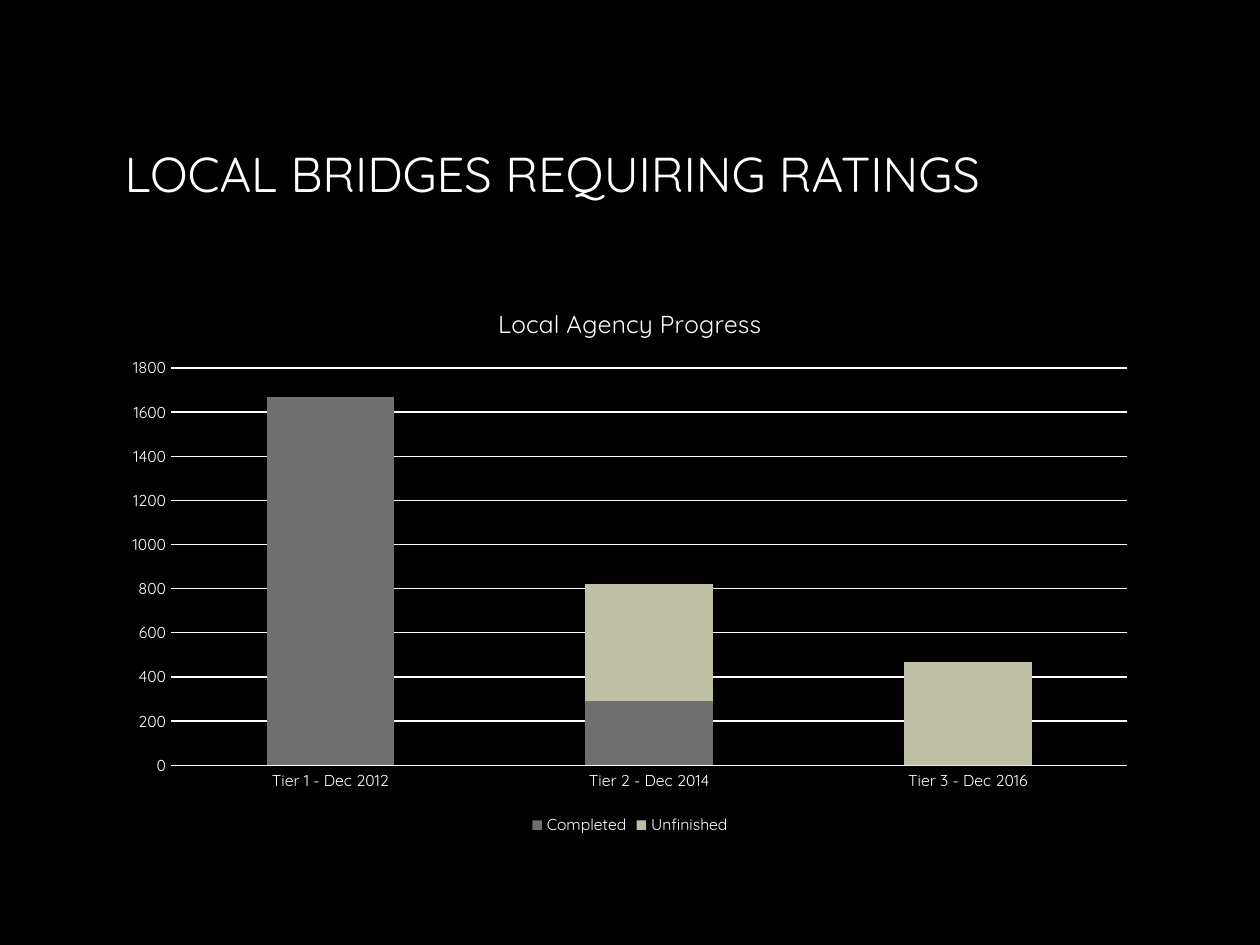
"""Build the slide on local bridges requiring ratings."""
from typing import NamedTuple

from pptx import Presentation
from pptx.chart.data import CategoryChartData as ChartData
from pptx.dml.color import RGBColor
from pptx.enum.chart import XL_CHART_TYPE as ChartType
from pptx.enum.chart import XL_LEGEND_POSITION as LegendPosition
from pptx.enum.chart import XL_TICK_MARK as TickMark
from pptx.enum.text import MSO_ANCHOR as Anchor
from pptx.enum.text import MSO_AUTO_SIZE as AutoSize
from pptx.enum.text import PP_ALIGN as Align
from pptx.util import Emu, Pt

BLACK = RGBColor(0x00, 0x00, 0x00)
WHITE = RGBColor(0xFF, 0xFF, 0xFF)
GRAY = RGBColor(0x6F, 0x6F, 0x6F)
SAND = RGBColor(0xBF, 0xBF, 0xA5)
FONT = "Quicksand"


class Box(NamedTuple):
    left: int
    top: int
    width: int
    height: int


class Progress(NamedTuple):
    name: str
    values: tuple[int, ...]
    color: RGBColor


PAGE_SIZE = (1260, 945)
TITLE_BOX = Box(112, 82, 1035, 181)
CHART_BOX = Box(112, 283, 1036, 557)
TIERS = ("Tier 1 - Dec 2012", "Tier 2 - Dec 2014", "Tier 3 - Dec 2016")
PROGRESS = (
    Progress("Completed", (1670, 290, 0), GRAY),
    Progress("Unfinished", (0, 530, 470), SAND),
)


def px(length: int) -> Emu:
    return Emu(round(length * 914400 / 126))


def style_font(font, size: int) -> None:
    font.name = FONT
    font.size = Pt(size)
    font.bold = False
    font.color.rgb = WHITE


def style_line(line) -> None:
    line.color.rgb = WHITE
    line.width = Pt(0.75)


def fill_title(title, text: str) -> None:
    title.left, title.top, title.width, title.height = map(px, TITLE_BOX)
    frame = title.text_frame
    frame.text = text
    frame.word_wrap = True
    frame.auto_size = AutoSize.NONE
    frame.vertical_anchor = Anchor.MIDDLE
    para = frame.paragraphs[0]
    para.alignment = Align.LEFT
    style_font(para.runs[0].font, 28)


def style_axes(chart) -> None:
    for axis in (chart.category_axis, chart.value_axis):
        axis.major_tick_mark = axis.minor_tick_mark = TickMark.NONE
        style_font(axis.tick_labels.font, 9)
    style_line(chart.category_axis.format.line)
    scale = chart.value_axis
    scale.minimum_scale, scale.maximum_scale, scale.major_unit = 0, 1800, 200
    scale.format.line.fill.background()
    style_line(scale.major_gridlines.format.line)


def add_progress_chart(page, title: str) -> None:
    data = ChartData()
    data.categories = TIERS
    for progress in PROGRESS:
        data.add_series(progress.name, progress.values)
    chart = page.shapes.add_chart(
        ChartType.COLUMN_STACKED, *map(px, CHART_BOX), data
    ).chart
    style_font(chart.font, 10)

    heading = chart.chart_title.text_frame
    heading.text = title
    style_font(heading.paragraphs[0].runs[0].font, 14)
    chart.chart_title.include_in_layout = False

    chart.has_legend = True
    chart.legend.position = LegendPosition.BOTTOM
    chart.legend.include_in_layout = False
    style_font(chart.legend.font, 9)

    style_axes(chart)
    plot = chart.plots[0]
    plot.vary_by_categories = False
    plot.gap_width, plot.overlap = 150, 100
    for series, progress in zip(plot.series, PROGRESS):
        series.format.fill.solid()
        series.format.fill.fore_color.rgb = progress.color


def main() -> None:
    deck = Presentation()
    deck.slide_width, deck.slide_height = map(px, PAGE_SIZE)
    page = deck.slides.add_slide(deck.slide_layouts[5])
    page.background.fill.solid()
    page.background.fill.fore_color.rgb = BLACK
    fill_title(page.shapes.title, "LOCAL BRIDGES REQUIRING RATINGS")
    add_progress_chart(page, "Local Agency Progress")
    deck.save("out.pptx")


if __name__ == "__main__":
    main()
